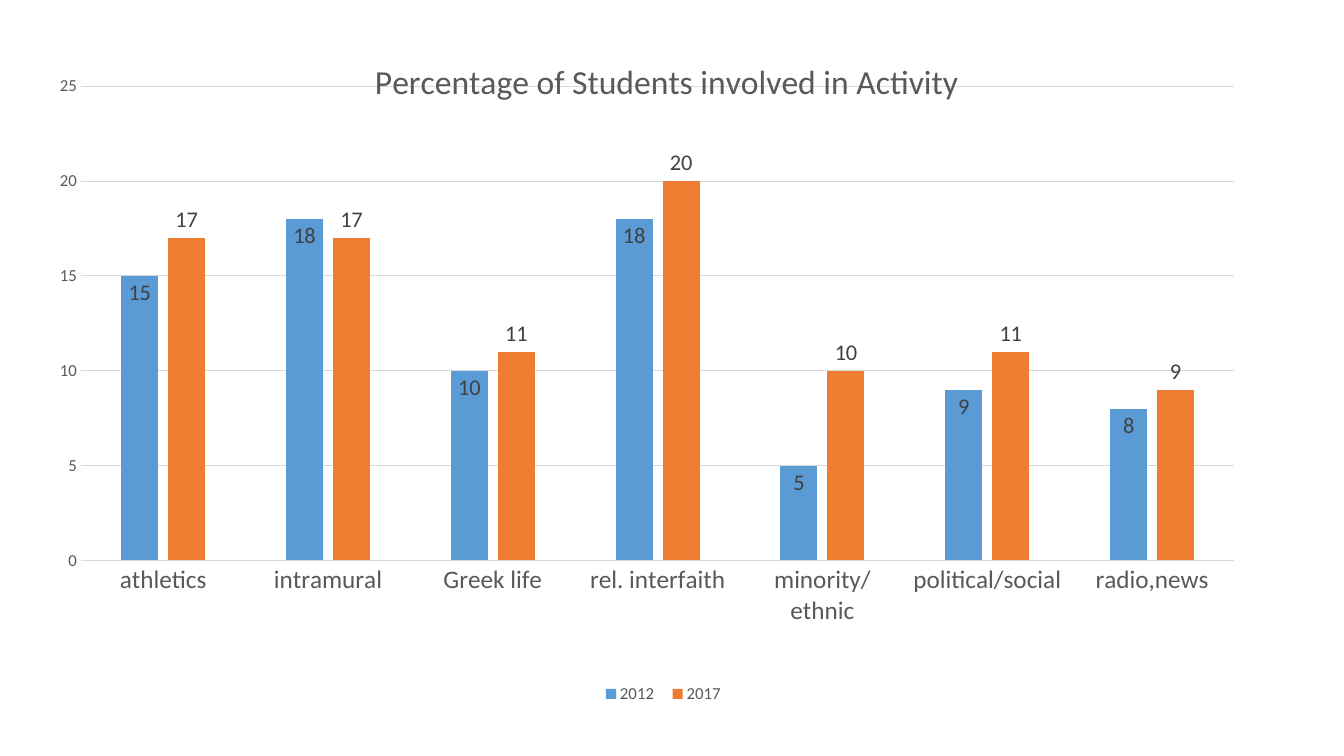
import pptx
import pptx.chart.data
import pptx.dml.color
import pptx.enum.chart
import pptx.oxml
import pptx.util
from pptx.util import Inches

BLUE = pptx.dml.color.RGBColor(0x5B, 0x9B, 0xD5)
ORANGE = pptx.dml.color.RGBColor(0xED, 0x7D, 0x31)
DARK_GREY = pptx.dml.color.RGBColor(0x40, 0x40, 0x40)
GREY = pptx.dml.color.RGBColor(0x59, 0x59, 0x59)
LIGHT_GREY = pptx.dml.color.RGBColor(0xD9, 0xD9, 0xD9)

POSITION = pptx.enum.chart.XL_LABEL_POSITION
NO_TICKS = pptx.enum.chart.XL_TICK_MARK.NONE
CHART_NS = "http://schemas.openxmlformats.org/drawingml/2006/chart"


def style_font(font, size, color):
    font.name = "Calibri"
    font.size = pptx.util.Pt(size)
    font.bold = False
    font.color.rgb = color


def place(part, index, inner=False, **fractions):
    """Fix a chart part by fractions of the chart area; index is its layout's child position."""
    for old_layout in part.findall(f"{{{CHART_NS}}}layout"):
        part.remove(old_layout)
    target = '<c:layoutTarget val="inner"/>' if inner else ""
    modes = '<c:xMode val="edge"/><c:yMode val="edge"/>'
    values = "".join(f'<c:{key} val="{value}"/>' for key, value in fractions.items())
    part.insert(index, pptx.oxml.parse_xml(
        f'<c:layout xmlns:c="{CHART_NS}"><c:manualLayout>'
        f"{target}{modes}{values}</c:manualLayout></c:layout>"))


presentation = pptx.Presentation()
presentation.slide_width = Inches(13.33)
presentation.slide_height = Inches(7.5)
slide = presentation.slides.add_slide(presentation.slide_layouts[6])

activities = pptx.chart.data.CategoryChartData(number_format="General")
activities.categories = ["athletics", "intramural", "Greek life", "rel. interfaith",
                         "minority/ethnic", "political/social", "radio,news"]
activities.add_series("2012", [15, 18, 10, 18, 5, 9, 8])
activities.add_series("2017", [17, 17, 11, 20, 10, 11, 9])

chart = slide.shapes.add_chart(
    pptx.enum.chart.XL_CHART_TYPE.COLUMN_CLUSTERED,
    Inches(0.23), Inches(0.23), Inches(12.7), Inches(6.8), activities).chart
style_font(chart.font, 10, GREY)

# Title
chart.has_title = True
title = chart.chart_title.text_frame
title.text = "Percentage of Students involved in Activity"
style_font(title.paragraphs[0].runs[0].font, 24, GREY)
chart.chart_title.include_in_layout = False

# Columns and their values
columns = chart.plots[0]
columns.gap_width = 219
columns.overlap = -27
columns.vary_by_categories = False
year_styles = [(BLUE, POSITION.INSIDE_END), (ORANGE, POSITION.OUTSIDE_END)]
for year, (color, label_position) in zip(columns.series, year_styles):
    year.format.fill.solid()
    year.format.fill.fore_color.rgb = color
    year.data_labels.show_value = True
    year.data_labels.position = label_position
    style_font(year.data_labels.font, 16, DARK_GREY)

# Axes
for axis, size in [(chart.category_axis, 18), (chart.value_axis, 12)]:
    axis.major_tick_mark = NO_TICKS
    axis.minor_tick_mark = NO_TICKS
    style_font(axis.tick_labels.font, size, GREY)
chart.value_axis.minimum_scale = 0
chart.value_axis.maximum_scale = 25
chart.value_axis.major_unit = 5
chart.value_axis.format.line.fill.background()
chart.value_axis.has_major_gridlines = True
for line in [chart.category_axis.format.line, chart.value_axis.major_gridlines.format.line]:
    line.color.rgb = LIGHT_GREY
    line.width = pptx.util.Pt(0.75)

# Legend
chart.has_legend = True
chart.legend.position = pptx.enum.chart.XL_LEGEND_POSITION.BOTTOM
chart.legend.include_in_layout = False
style_font(chart.legend.font, 12, GREY)

chart_space = chart.element
place(chart_space.find(f".//{{{CHART_NS}}}plotArea"), 0, inner=True,
      x=0.045, y=0.092, w=0.901, h=0.692)
place(chart_space.find(f".//{{{CHART_NS}}}title"), 1, x=0.27, y=0.043)
place(chart_space.find(f".//{{{CHART_NS}}}legend"), 1, x=0.445, y=0.957, w=0.11, h=0.043)

presentation.save("out.pptx")
